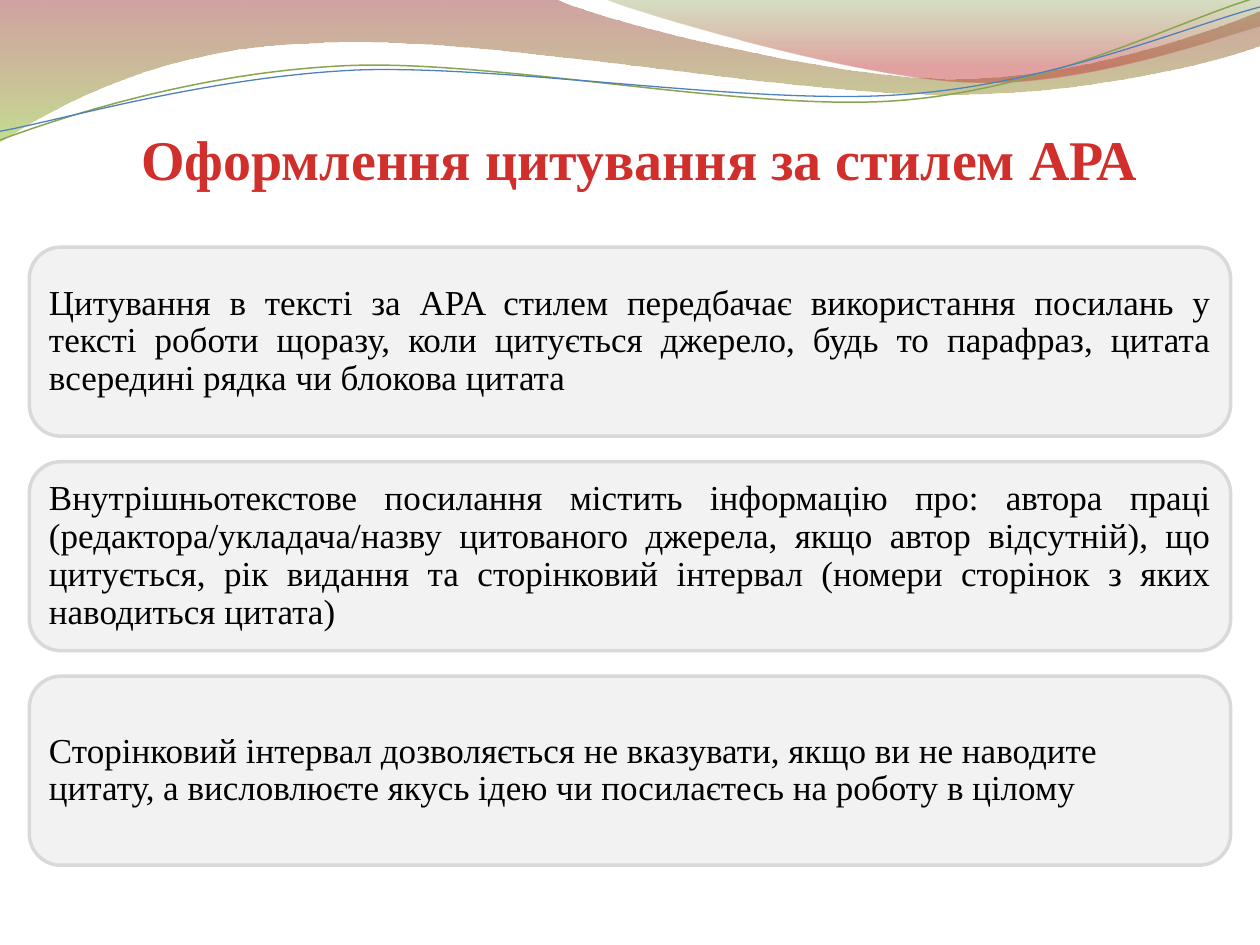
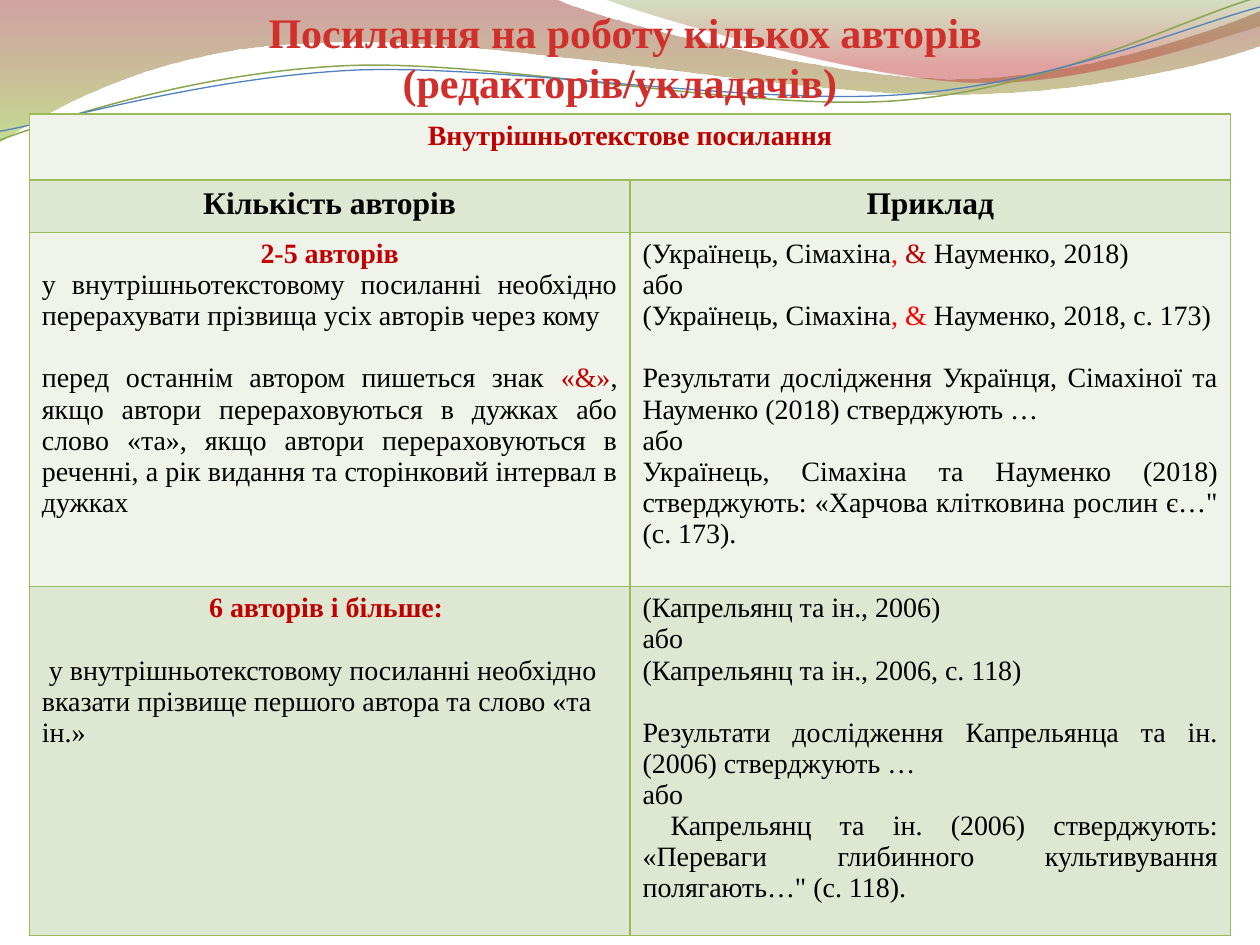
from lxml.etree import SubElement
from pptx import Presentation
from pptx.dml.color import RGBColor as RGB
from pptx.enum.shapes import MSO_SHAPE, PP_PLACEHOLDER
from pptx.enum.text import MSO_ANCHOR as ANCHOR, MSO_AUTO_SIZE as AUTO_SIZE, PP_ALIGN as ALIGN
from pptx.oxml.ns import qn
from pptx.util import Pt

FONT = "Times New Roman"
COLORS = {
    "title": "D02F2C", "text": "000000", "accent": "C00000", "mark": "FF0000",
    "box": "F2F2F2", "box line": "D9D9D9",
    "light row": "EFF3EA", "dark row": "DEE7D1", "grid": "9BBB59",
    "green line": "89A54F", "blue line": "4F81BD",
    "wave red": "973330", "wave lime": "95C238",
    "crest green": "769537", "crest red": "BE3330",
}
LEFT, WIDTH = 16.75, 686.5


def color(name):
    return RGB.from_string(COLORS[name])


def write(paragraph, runs, size, align, bold=False):
    """Add runs in one size and alignment; a run is a string or (string, colour name)."""
    paragraph.alignment = align
    for content in runs:
        text, color_name = (content, "text") if isinstance(content, str) else content
        run = paragraph.add_run()
        run.text = text
        run.font.name = FONT
        run.font.size = Pt(size)
        run.font.bold = bold
        run.font.color.rgb = color(color_name)


presentation = Presentation()
presentation.slide_width, presentation.slide_height = Pt(720), Pt(540)
layout = presentation.slide_layouts[5]
for placeholder in list(layout.placeholders):
    if placeholder.placeholder_format.type != PP_PLACEHOLDER.TITLE:
        layout.shapes.element.remove(placeholder.element)

# Titles: text, left, top, width, height, size, anchor
titles = [
    ("Оформлення цитування за стилем АРА", 67.5, 67.5, 596, 46, 32, ANCHOR.MIDDLE),
    ("Посилання на роботу кількох авторів (редакторів/укладачів) ",
     50.5, 0, 613.5, 65.5, 24, ANCHOR.TOP),
]
slides = []
for text, left, top, width, height, size, anchor in titles:
    slide = presentation.slides.add_slide(layout)
    title = slide.shapes.title
    title.left, title.top, title.width, title.height = Pt(left), Pt(top), Pt(width), Pt(height)
    title.text_frame.word_wrap = True
    title.text_frame.auto_size = AUTO_SIZE.NONE
    title.text_frame.vertical_anchor = anchor
    write(title.text_frame.paragraphs[0], [(text, "title")], size, ALIGN.CENTER, bold=True)
    slides.append(slide)
rules_slide, authors_slide = slides

# Wave decoration: two numbers make a straight segment, six a Bezier curve
gradient_waves = [
    ([(0, 0), (317, -0.75), (343, 12, 478, 45, 546, 45), (614, 45, 690, 19, 720, 6.5),
      (720.5, 26), (708, 32, 626, 55, 537, 54), (446, 54, 275, 20, 185, 24.5),
      (93, 26, 33, 60, -0.75, 81.5)],
     [(0, "wave red", 45), (1, "wave lime", 55)]),
    ([(345, -0.75), (366, 8, 491, 45, 554, 47), (616, 50, 692, 23, 720, 15), (720, 0)],
     [(0, "crest green", 30), (0.8, "crest red", 45)]),
]
line_waves = [
    ([(0, 80), (35, 67, 114, 41, 199, 37.5), (284, 34, 427, 64, 513, 57.5),
      (600, 51, 675, 11, 718.5, -1.5)], "green line", 0.85),
    ([(0, 75), (34, 69, 118, 44, 204, 40), (290, 37, 430, 60.5, 516, 54),
      (602, 48, 678, 15, 720, 4)], "blue line", 0.75),
]
waves = []
for segments, *style in gradient_waves + line_waves:
    closed = len(style) == 1
    builder = rules_slide.shapes.build_freeform(*map(Pt, segments[0]))
    builder.add_line_segments([tuple(map(Pt, segment[-2:])) for segment in segments[1:]],
                              close=closed)
    wave = builder.convert_to_shape()
    # Bend the straight segments that have control points
    lines = list(wave.element.iter(qn("a:lnTo")))
    for line, segment in zip(lines, segments[1:]):
        if len(segment) == 6:
            line.tag = qn("a:cubicBezTo")
            for x, y in (segment[2:4], segment[0:2]):
                control = SubElement(line, qn("a:pt"), x=str(Pt(x) - wave.left),
                                     y=str(Pt(y) - wave.top))
                line.insert(0, control)
    wave.shadow.inherit = False
    if closed:
        wave.line.fill.background()
        wave.fill.gradient()
        wave.fill.gradient_angle = 270
        for stop, (position, color_name, _) in zip(wave.fill.gradient_stops, style[0]):
            stop.position = position
            stop.color.rgb = color(color_name)
        stop_colors = wave.element.spPr.findall(".//" + qn("a:srgbClr"))
        for stop_color, (_, _, opacity) in zip(stop_colors, style[0]):
            SubElement(stop_color, qn("a:alpha")).set("val", str(opacity * 1000))
    else:
        wave.fill.background()
        wave.line.color.rgb = color(style[0])
        wave.line.width = Pt(style[1])
    waves.append(wave)
# The layout carries the waves, so every slide shows them behind its content
for index, wave in enumerate(waves):
    layout.shapes.element.insert(2 + index, wave.element)

# Slide 1: citation rules
BOX_TOP, BOX_HEIGHT, BOX_GAP = 141.25, 108, 14.6
rules = [
    ("Цитування в тексті за APA стилем передбачає використання посилань у тексті роботи "
     "щоразу, коли цитується джерело, будь то парафраз, цитата всередині рядка чи "
     "блокова цитата ", ALIGN.JUSTIFY),
    ("Внутрішньотекстове посилання містить інформацію про: автора праці "
     "(редактора/укладача/назву цитованого джерела, якщо автор відсутній), що цитується, "
     "рік видання та сторінковий інтервал (номери сторінок з яких наводиться цитата) ",
     ALIGN.JUSTIFY),
    ("Сторінковий інтервал дозволяється не вказувати, якщо ви не наводите цитату, "
     "а висловлюєте якусь ідею чи посилаєтесь на роботу в цілому", ALIGN.LEFT),
]
for index, (text, align) in enumerate(rules):
    top = BOX_TOP + index * (BOX_HEIGHT + BOX_GAP)
    box = rules_slide.shapes.add_shape(
        MSO_SHAPE.ROUNDED_RECTANGLE, Pt(LEFT), Pt(top), Pt(WIDTH), Pt(BOX_HEIGHT))
    box.shadow.inherit = False
    box.fill.solid()
    box.fill.fore_color.rgb = color("box")
    box.line.color.rgb = color("box line")
    box.line.width = Pt(2)
    frame = box.text_frame
    frame.word_wrap = True
    frame.vertical_anchor = ANCHOR.MIDDLE
    # The rounded corners already inset the text by about 5 points
    frame.margin_left = frame.margin_right = Pt(6)
    frame.margin_top = frame.margin_bottom = Pt(5.75)
    frame.paragraphs[0].line_spacing = 0.9
    write(frame.paragraphs[0], [text], 20, align)

# Slide 2: table of references; paragraphs are (runs, alignment, bold, space before, indent)
GAP = 17.75


def body(*runs, align=ALIGN.JUSTIFY, before=0, indent=0):
    """Describe a regular paragraph of a table cell."""
    return runs, align, False, before, indent


headings = {
    text: [([(text, color_name)], ALIGN.CENTER, True, 0, 0)]
    for text, color_name in [
        ("Внутрішньотекстове посилання", "accent"), ("Кількість авторів", "text"),
        ("Приклад", "text"), ("2-5 авторів", "accent"), ("6 авторів і більше: ", "accent")]
}
# Rows: height, fill, text size, cells
rows = [
    (37.75, "light row", 16, [headings["Внутрішньотекстове посилання"]]),
    (29.75, "dark row", 18, [headings["Кількість авторів"], headings["Приклад"]]),
    (202.5, "light row", 16, [
        headings["2-5 авторів"] + [
            body("у внутрішньотекстовому посиланні необхідно перерахувати прізвища усіх "
                 "авторів через кому "),
            body("перед останнім автором пишеться знак ", ("«&»", "accent"),
                 ", якщо автори перераховуються в дужках або слово «та», якщо автори "
                 "перераховуються в реченні, а рік видання та сторінковий інтервал в дужках",
                 before=GAP),
        ], [
            body("(Українець, Сімахіна", (", ", "mark"), ("&", "accent"), " Науменко, 2018) "),
            body("або "),
            body("(Українець, Сімахіна", (", &", "mark"), " Науменко, 2018, с. 173) "),
            body("Результати дослідження Українця, Сімахіної та Науменко (2018) "
                 "стверджують … ", before=GAP),
            body("або "),
            body("Українець, Сімахіна та Науменко (2018) стверджують: «Харчова клітковина "
                 "рослин є…\" (с. 173). "),
        ]]),
    (199.25, "dark row", 16, [
        headings["6 авторів і більше: "] + [
            body("у внутрішньотекстовому посиланні необхідно вказати прізвище першого автора "
                 "та слово «та ін.»", align=ALIGN.LEFT, before=GAP, indent=4),
        ], [
            body("(Капрельянц та ін., 2006) "),
            body("або "),
            body("(Капрельянц та ін., 2006, c. 118)"),
            body("Результати дослідження Капрельянца та ін. (2006) стверджують … ", before=GAP),
            body("або "),
            body("Капрельянц та ін. (2006) стверджують: «Переваги глибинного культивування "
                 "полягають…\" (с. 118). ", indent=16),
        ]]),
]
table = authors_slide.shapes.add_table(
    len(rows), 2, Pt(LEFT), Pt(65.25), Pt(WIDTH), Pt(sum(row[0] for row in rows))).table
table.first_row = table.horz_banding = False
for column in table.columns:
    column.width = Pt(WIDTH / 2)
table.cell(0, 0).merge(table.cell(0, 1))

for row_index, (height, fill, size, cells) in enumerate(rows):
    table.rows[row_index].height = Pt(height)
    for cell in table.rows[row_index].cells:
        cell.fill.solid()
        cell.fill.fore_color.rgb = color(fill)
        properties = cell._tc.get_or_add_tcPr()
        for position, side in enumerate(("a:lnL", "a:lnR", "a:lnT", "a:lnB")):
            border = SubElement(properties, qn(side), w=str(Pt(1)))
            border_fill = SubElement(border, qn("a:solidFill"))
            SubElement(border_fill, qn("a:srgbClr"), val=COLORS["grid"])
            properties.insert(position, border)
    for column_index, content in enumerate(cells):
        frame = table.cell(row_index, column_index).text_frame
        for index, (runs, align, bold, before, indent) in enumerate(content):
            paragraph = frame.add_paragraph() if index else frame.paragraphs[0]
            if before:
                paragraph.space_before = Pt(before)
            if indent:
                paragraph._p.get_or_add_pPr().set("indent", str(Pt(indent)))
            write(paragraph, runs, size, align, bold)

presentation.save("out.pptx")
